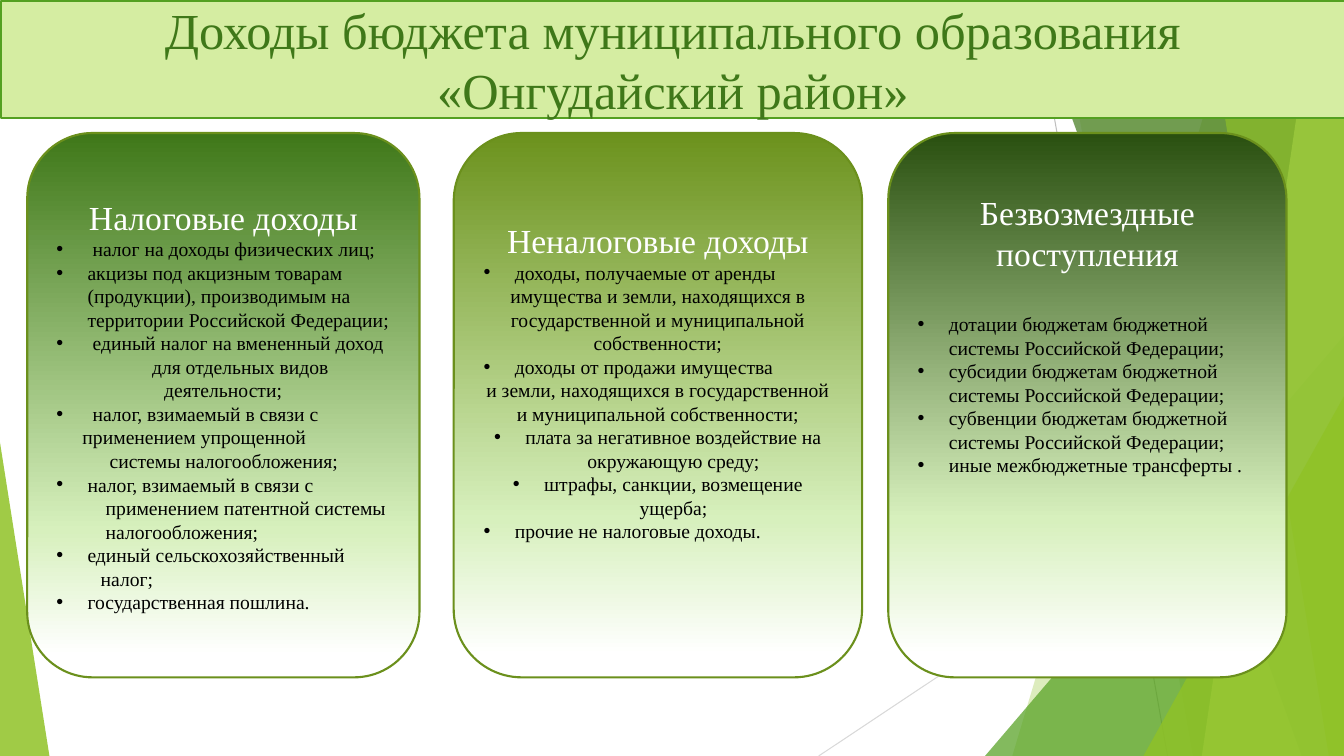
import pptx
import pptx.util
import pptx.dml.color
import pptx.enum.shapes
import pptx.enum.text
import pptx.oxml
import pptx.oxml.ns
import lxml.etree

Inches, Pt = pptx.util.Inches, pptx.util.Pt
SHAPE = pptx.enum.shapes.MSO_SHAPE
ALIGN = pptx.enum.text.PP_ALIGN
qn = pptx.oxml.ns.qn
WIDTH, HEIGHT = 13.33, 7.5


def rgb(value):
    return pptx.dml.color.RGBColor.from_string(value)


def style_run(r, size, color):
    r.font.size = Pt(size)
    r.font.name = "Times New Roman"
    r.font.color.rgb = rgb(color)


prs = pptx.Presentation()
prs.slide_width, prs.slide_height = Inches(WIDTH), Inches(HEIGHT)
s = prs.slides.add_slide(prs.slide_layouts[6])

# Thin background lines
for x1, y1, x2, y2, color in [(10.25, 0, 11.58, 7.5, "BFBFBF"),
                              (13.33, 4.03, 8.12, 7.5, "D9D9D9")]:
    line = s.shapes.add_connector(pptx.enum.shapes.MSO_CONNECTOR.STRAIGHT,
                                  Inches(x1), Inches(y1), Inches(x2), Inches(y2))
    line.line.color.rgb = rgb(color)
    line.line.width = Pt(0.75)
    lxml.etree.SubElement(line._element.spPr, qn("a:effectLst"))

# Translucent facets: a band is (top x, bottom x) up to the right edge,
# a triangle is (left, top, width, apex) down to the bottom edge
facets = [
    ((12.28, 10.04), "90C226", 30),
    ((10.5, 11.83), "90C226", 20),
    ((9.77, 3.33, 3.56, 1), "54A021", 72),
    ((10.21, 12.91), "3F7819", 70),
    ((13.03, 11.92), "C0E474", 70),
    ((11.96, 13.18), "90C226", 65),
    ((11.34, 3.93, 1.99, 1), "90C226", 80),
    ((0, 4.39, 0.49, 0), "90C226", 85),
]
for geometry, color, opacity in facets:
    if len(geometry) == 2:
        top_x, bottom_x = geometry
        outline = s.shapes.build_freeform(Inches(top_x), 0)
        outline.add_line_segments([(Inches(x), Inches(y)) for x, y in
                                   [(WIDTH, 0), (WIDTH, HEIGHT), (bottom_x, HEIGHT)]])
        facet = outline.convert_to_shape()
    else:
        left, top, width, apex = geometry
        facet = s.shapes.add_shape(SHAPE.ISOSCELES_TRIANGLE, Inches(left), Inches(top),
                                   Inches(width), Inches(HEIGHT - top))
        facet.adjustments[0] = apex
    facet.shadow.inherit = False
    facet.line.fill.background()
    facet.fill.solid()
    facet.fill.fore_color.rgb = rgb(color)
    clr = facet._element.spPr.find(qn("a:solidFill"))[0]
    lxml.etree.SubElement(clr, qn("a:alpha")).set("val", str(opacity * 1000))

# Title banner
banner = s.shapes.add_shape(SHAPE.RECTANGLE, Inches(0.01), Inches(0.01),
                            Inches(WIDTH), Inches(1.16))
banner.shadow.inherit = False
banner.fill.solid()
banner.fill.fore_color.rgb = rgb("D5EDA2")
banner.line.color.rgb = rgb("54A021")
banner.line.width = Pt(1.5)
banner.text_frame.text = "Доходы бюджета муниципального образования «Онгудайский район»"
p = banner.text_frame.paragraphs[0]
p.alignment = ALIGN.CENTER
style_run(p.runs[0], 36, "3F7819")

# Cards: left, width, top colour, middle stop, bottom inset, gap under heading,
# heading, items as (text, left margin, bullet, alignment)
L, C = ALIGN.LEFT, ALIGN.CENTER
cards = [
    (0.27, 3.89, "3F7819", 73, 0.05, 0, "Налоговые доходы", [
        ("налог на доходы физических лиц;", 0.36, True, L),
        ("акцизы под акцизным товарам (продукции), производимым на "
         "территории Российской Федерации;", 0.31, True, L),
        ("единый налог на вмененный доход", 0.36, True, L),
        ("для отдельных видов", 0.95, False, L),
        ("деятельности;", 1.07, False, L),
        ("налог, взимаемый в связи с", 0.36, True, L),
        ("применением упрощенной", 0.26, False, L),
        ("системы налогообложения;", 0.53, False, L),
        ("налог, взимаемый в связи с", 0.31, True, L),
        ("применением патентной системы", 0.49, False, L),
        ("налогообложения;", 0.49, False, L),
        ("единый сельскохозяйственный", 0.31, True, L),
        ("налог;", 0.44, False, L),
        ("государственная пошлина.", 0.31, True, L),
    ]),
    (4.5, 4.05, "6C921D", 71, 0.52, 0, "Неналоговые доходы", [
        ("доходы, получаемые от аренды", 0.31, True, L),
        ("имущества и земли, находящихся в государственной и муниципальной "
         "собственности;", 0, False, C),
        ("доходы от продажи имущества", 0.31, True, L),
        ("и земли, находящихся в государственной и муниципальной "
         "собственности;", 0, False, C),
        ("плата за негативное воздействие на окружающую среду;", 0.31, True, C),
        ("штрафы, санкции, возмещение ущерба;", 0.31, True, C),
        ("прочие не налоговые доходы.", 0.31, True, L),
    ]),
    (8.81, 3.95, "2A5010", 71, 1.45, 28, "Безвозмездные поступления", [
        ("дотации бюджетам бюджетной системы Российской Федерации;", 0.31, True, L),
        ("субсидии бюджетам бюджетной системы Российской Федерации;", 0.31, True, L),
        ("субвенции бюджетам бюджетной системы Российской Федерации;", 0.31, True, L),
        ("иные межбюджетные трансферты .", 0.31, True, L),
    ]),
]
for left, width, color, middle, inset, gap, heading, items in cards:
    card = s.shapes.add_shape(SHAPE.ROUNDED_RECTANGLE, Inches(left), Inches(1.32),
                              Inches(width), Inches(5.4))
    card.shadow.inherit = False
    card.line.color.rgb = rgb("6B901C")
    card.line.width = Pt(1.5)

    # Three-stop vertical gradient
    card.fill.gradient()
    card.fill.gradient_angle = 270
    stops = card._element.spPr.find(qn("a:gradFill")).find(qn("a:gsLst"))
    for stop in list(stops):
        stops.remove(stop)
    for position, stop_color in [(0, color), (middle, "D7F0BD"), (96, "FFFFFF")]:
        stop = lxml.etree.SubElement(stops, qn("a:gs"), pos=str(position * 1000))
        lxml.etree.SubElement(stop, qn("a:srgbClr"), val=stop_color)

    # Heading and list
    tf = card.text_frame
    tf.margin_bottom = Inches(inset)
    tf.text = heading
    p = tf.paragraphs[0]
    p.alignment = C
    p.space_after = Pt(gap)
    style_run(p.runs[0], 24, "FFFFFF")
    for text, margin, bullet, align in items:
        p = tf.add_paragraph()
        p.text = text
        p.alignment = align
        pPr = p._p.get_or_add_pPr()
        pPr.set("marL", str(Inches(margin)))
        if bullet:
            pPr.set("indent", str(-Inches(margin)))
            lxml.etree.SubElement(pPr, qn("a:buFont"), typeface="Arial")
            lxml.etree.SubElement(pPr, qn("a:buChar"), char="•")
        style_run(p.runs[0], 14, "000000")

prs.save("out.pptx")
